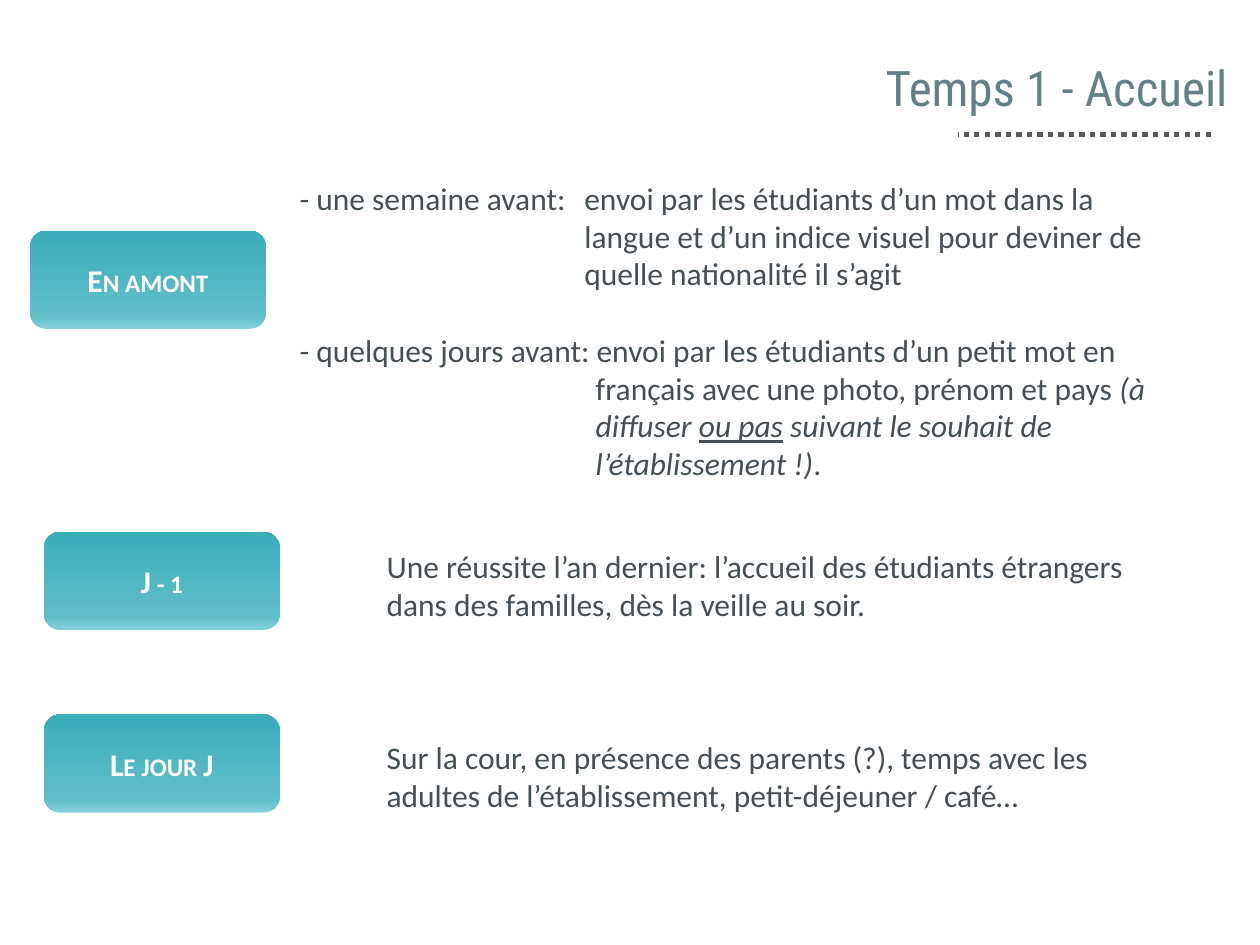
from copy import deepcopy

from pptx import Presentation
from pptx.dml.color import RGBColor
from pptx.enum.dml import MSO_LINE
from pptx.enum.shapes import MSO_CONNECTOR, MSO_SHAPE
from pptx.enum.text import MSO_ANCHOR, PP_ALIGN
from pptx.oxml.ns import qn
from pptx.util import Inches, Pt

DOTTED = MSO_LINE.ROUND_DOT
STRAIGHT = MSO_CONNECTOR.STRAIGHT
ROUNDED = MSO_SHAPE.ROUNDED_RECTANGLE
MIDDLE = MSO_ANCHOR.MIDDLE
CENTER = PP_ALIGN.CENTER

WHITE = RGBColor(0xFF, 0xFF, 0xFF)
TITLE_COLOR = RGBColor(0x64, 0x80, 0x86)
BODY_COLOR = RGBColor(0x44, 0x4F, 0x56)
RULE_COLOR = RGBColor(0x59, 0x59, 0x59)
LABEL_GRADIENT = [
    (0, RGBColor(0x85, 0xD2, 0xDC)),
    (0.12, RGBColor(0x62, 0xBF, 0xCA)),
    (1, RGBColor(0x39, 0xAD, 0xB8)),
]


class SlideWriter:
    title_font = "Roboto Condensed"
    body_font = "Calibri"
    title_size = Pt(28)
    body_size = Pt(18)
    line_height = 22

    def __init__(self, page):
        self.page = page

    def style(self, span, color, font=body_font, size=body_size):
        span.font.name = font
        span.font.size = size
        span.font.color.rgb = color

    def text_box(self, left, top, width, height):
        box = self.page.shapes.add_textbox(
            Inches(left), Inches(top), Inches(width), Inches(height))
        box.text_frame.word_wrap = True
        return box.text_frame

    def title(self, text, left, top, width, height):
        frame = self.text_box(left, top, width, height)
        frame.text = text
        para = frame.paragraphs[0]
        para.alignment = CENTER
        self.style(para.runs[0], TITLE_COLOR, self.title_font, self.title_size)

    def rule(self, left, right, top):
        line = self.page.shapes.add_connector(
            STRAIGHT, Inches(right), Inches(top), Inches(left), Inches(top))
        line.line.color.rgb = RULE_COLOR
        line.line.width = Pt(3)
        line.line.dash_style = DOTTED
        properties = line.element.spPr
        properties.append(properties.makeelement(qn("a:effectLst"), {}))

    def label(self, text, left, top):
        shape = self.page.shapes.add_shape(
            ROUNDED, Inches(left), Inches(top), Inches(1.87), Inches(0.78))
        shape.shadow.inherit = False
        shape.line.fill.background()
        shape.fill.gradient()
        shape.fill.gradient_angle = 90
        stop_list = shape.element.spPr.find(".//" + qn("a:gsLst"))
        stop_list.insert(1, deepcopy(stop_list[0]))
        for stop, (position, color) in zip(shape.fill.gradient_stops, LABEL_GRADIENT):
            stop.position = position
            stop.color.rgb = color
        frame = shape.text_frame
        frame.text = text
        frame.vertical_anchor = MIDDLE
        para = frame.paragraphs[0]
        para.alignment = CENTER
        span = para.runs[0]
        self.style(span, WHITE)
        span.font.bold = True
        span._r.get_or_add_rPr().set("cap", "small")

    def body(self, paragraphs, left, top, width, height, gap_lines):
        frame = self.text_box(left, top, width, height)
        for index, (margin, indent, spans) in enumerate(paragraphs):
            para = frame.add_paragraph() if index else frame.paragraphs[0]
            if index:
                para.space_before = Pt(gap_lines * self.line_height)
            properties = para._p.get_or_add_pPr()
            properties.set("marL", str(Inches(margin)))
            properties.set("indent", str(Inches(indent)))
            for text, italic, underline in spans:
                span = para.add_run()
                span.text = text
                self.style(span, BODY_COLOR)
                span.font.italic = italic
                span.font.underline = underline


def plain(text):
    return text, False, False


def main():
    deck = Presentation()
    deck.slide_width = Inches(10)
    deck.slide_height = Inches(7.5)
    writer = SlideWriter(deck.slides.add_slide(deck.slide_layouts[6]))

    writer.rule(7.6, 9.61, 1.07)
    writer.title("Temps 1 - Accueil", 6.34, 0.41, 4.09, 0.57)

    before = [
        (2.26, -2.26, [plain(
            "- une semaine avant:\tenvoi par les étudiants d’un mot dans la langue "
            "et d’un indice visuel pour deviner de quelle nationalité il s’agit")]),
        (2.35, -2.35, [
            plain("- quelques jours avant: envoi par les étudiants d’un petit mot "
                  "en français avec une photo, prénom et pays "),
            ("(à diffuser ", True, False),
            ("ou pas", True, True),
            (" suivant le souhait de l’établissement !)", True, False),
            plain("."),
        ]),
    ]
    welcome = [
        (0.49, 0, [plain(
            "Une réussite l’an dernier: l’accueil des étudiants étrangers "
            "dans des familles, dès la veille au soir.")]),
        (0.49, 0, [plain(
            "Sur la cour, en présence des parents (?), temps avec les adultes "
            "de l’établissement, petit-déjeuner / café…")]),
    ]
    writer.body(before, 2.28, 1.37, 6.97, 2.52, gap_lines=1)
    writer.body(welcome, 2.48, 4.29, 6.77, 2.22, gap_lines=3)

    for text, left, top in [
        ("En amont", 0.24, 1.83),
        ("J - 1", 0.35, 4.22),
        ("Le jour J", 0.35, 5.67),
    ]:
        writer.label(text, left, top)

    deck.save("out.pptx")


if __name__ == "__main__":
    main()
